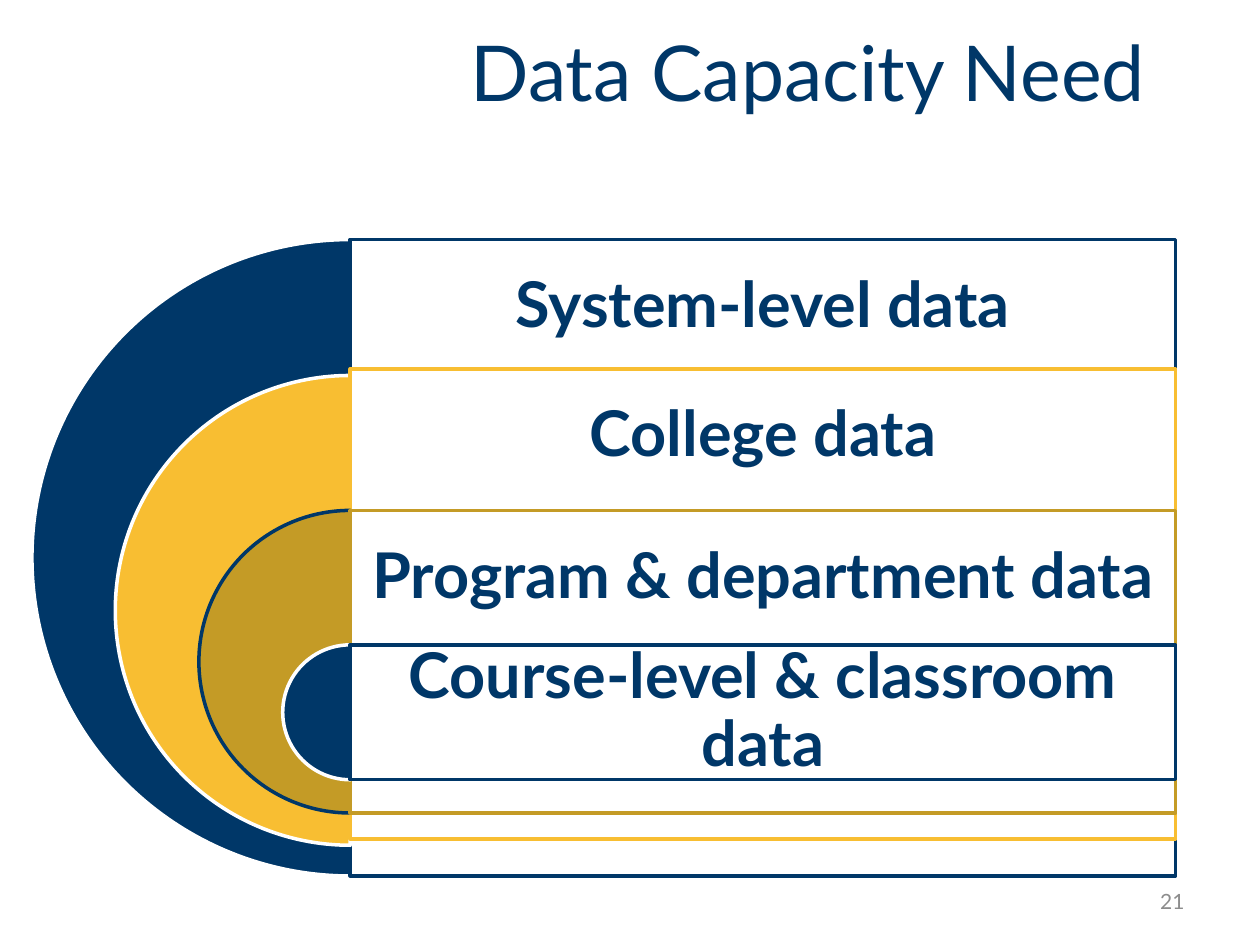
from lxml.etree import SubElement
from pptx import Presentation
from pptx.dml.color import RGBColor
from pptx.enum.shapes import MSO_SHAPE
from pptx.enum.text import MSO_ANCHOR, PP_ALIGN
from pptx.oxml.ns import qn
from pptx.util import Cm, Pt

# Content: label, ring colour, ring outline, ring top, panel top, diameter (cm)
TITLE = "Data Capacity Need"
PAGE_NUMBER = "21"
LEVELS = [
    ("System-level data", "navy", "white", 4.83, 4.83, 12.83),
    ("College data", "yellow", "white", 7.57, 7.44, 9.47),
    ("Program & department data", "gold", "navy", 10.29, 10.29, 6.1),
    ("Course-level & classroom data", "navy", "white", 13.0, 13.0, 2.72),
]

THEME = {
    "font": "Lato",
    "navy": RGBColor(0x00, 0x37, 0x68),
    "yellow": RGBColor(0xF8, 0xBE, 0x32),
    "gold": RGBColor(0xC4, 0x9B, 0x26),
    "white": RGBColor(0xFF, 0xFF, 0xFF),
    "grey": RGBColor(0x8C, 0x8C, 0x8C),
    "title_size": Pt(44),
    "label_size": Pt(36),
    "number_size": Pt(12),
    "line_width": Pt(2),
}

# Layout (cm)
CENTRE_X = 7.06
PANEL_WIDTH = 16.64
LABEL_HEIGHT = 2.72
LABEL_INSET = 0.38

presentation = Presentation()
presentation.slide_width = Cm(25.4)
presentation.slide_height = Cm(19.05)
slide = presentation.slides.add_slide(presentation.slide_layouts[6])


def set_attributes(target, values):
    for name, value in values.items():
        setattr(target, name, value)


def add_outlined(kind, box, fill, line):
    shape = slide.shapes.add_shape(kind, *map(Cm, box))
    shape.shadow.inherit = False
    shape.fill.solid()
    shape.fill.fore_color.rgb = THEME[fill]
    shape.line.color.rgb = THEME[line]
    shape.line.width = THEME["line_width"]
    return shape


def add_text(text, box, size, color, frame_format, paragraph_format, bold=False):
    frame = slide.shapes.add_textbox(*map(Cm, box)).text_frame
    set_attributes(frame, {"word_wrap": True, **frame_format})
    paragraph = frame.paragraphs[0]
    set_attributes(paragraph, paragraph_format)
    run = paragraph.add_run()
    run.text = text
    set_attributes(run.font, {"name": THEME["font"], "size": THEME[size], "bold": bold})
    run.font.color.rgb = THEME[color]


# Page number
add_text(PAGE_NUMBER, (18.21, 17.65, 5.92, 1.02), "number_size", "grey",
         {"vertical_anchor": MSO_ANCHOR.MIDDLE}, {"alignment": PP_ALIGN.RIGHT})

# Nested half rings, each with its panel and label
label_frame = {"vertical_anchor": MSO_ANCHOR.MIDDLE}
for side in ("left", "right", "top", "bottom"):
    label_frame[f"margin_{side}"] = Cm(LABEL_INSET)

for label, color, outline, ring_top, panel_top, diameter in LEVELS:
    ring_box = (CENTRE_X - diameter / 2, ring_top, diameter, diameter)
    ring = add_outlined(MSO_SHAPE.PIE, ring_box, color, outline)
    ring.adjustments[0] = 54
    ring.adjustments[1] = 162

    panel_box = (CENTRE_X, panel_top, PANEL_WIDTH, diameter)
    panel = add_outlined(MSO_SHAPE.RECTANGLE, panel_box, "white", color)
    fill_color = panel.fill._xPr.find(qn("a:solidFill"))[0]
    SubElement(fill_color, qn("a:alpha"), val="90000")

    add_text(label, (CENTRE_X, panel_top, PANEL_WIDTH, LABEL_HEIGHT),
             "label_size", "navy", label_frame,
             {"alignment": PP_ALIGN.CENTER, "line_spacing": 0.9}, bold=True)

# Title
add_text(TITLE, (7.82, 0.38, 16.94, 2.62), "title_size", "navy",
         {"vertical_anchor": MSO_ANCHOR.TOP}, {"alignment": PP_ALIGN.CENTER})

presentation.save("out.pptx")
